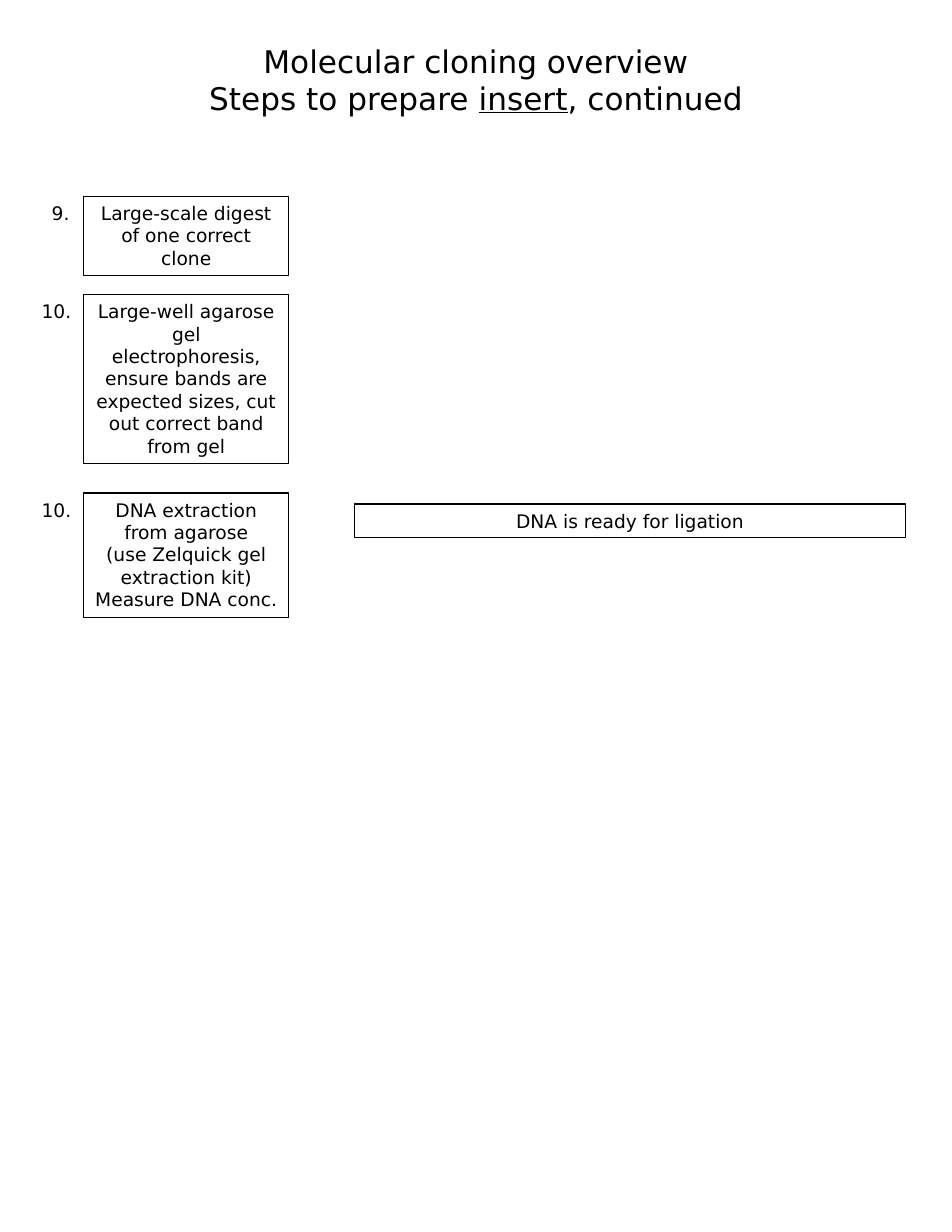
"""Build the molecular cloning overview slide on preparing the insert."""
from dataclasses import dataclass

from pptx import Presentation
from pptx.dml.color import RGBColor
from pptx.enum import shapes, text
from pptx.util import Cm, Pt

COLORS = {"ink": "000000", "paper": "FFFFFF"}
FONT = "DejaVu Sans"
LINE_HEIGHT = 0.76
STEP_LEFT, STEP_WIDTH = 1.9, 4.65


@dataclass(frozen=True)
class Step:
    number: str
    number_left: float
    number_width: float
    top: float
    height: float
    wording: str


STEPS = [
    Step("9.", 0.84, 1.07, 4.45, 1.8, "Large-scale digest of one correct clone"),
    Step("10.", 0.43, 1.7, 6.68, 3.84,
         "Large-well agarose gel electrophoresis, ensure bands are "
         "expected sizes, cut out correct band from gel"),
    Step("10.", 0.43, 1.7, 11.18, 2.82,
         "DNA extraction from agarose\n(use Zelquick gel extraction kit)\n"
         "Measure DNA conc."),
]


def format_text(text_frame, size: float) -> None:
    text_frame.word_wrap = True
    text_frame.vertical_anchor = text.MSO_ANCHOR.TOP
    for paragraph in text_frame.paragraphs:
        paragraph.alignment = text.PP_ALIGN.CENTER
        for run in paragraph.runs:
            run.font.name = FONT
            run.font.size = Pt(size)
            run.font.color.rgb = RGBColor.from_string(COLORS["ink"])


def add_title(slide) -> None:
    title = slide.shapes.add_textbox(Cm(0), Cm(0.84), Cm(21.59), Cm(1.96))
    title.text_frame.text = "Molecular cloning overview"
    subtitle = title.text_frame.add_paragraph()
    for wording in ("Steps to prepare ", "insert", ", continued"):
        run = subtitle.add_run()
        run.text = wording
        run.font.underline = wording == "insert"
    format_text(title.text_frame, 20)


def add_box(slide, wording: str, left: float, top: float, width: float,
            height: float, outline: str = "ink") -> None:
    shape = slide.shapes.add_shape(
        shapes.MSO_SHAPE.RECTANGLE, Cm(left), Cm(top), Cm(width), Cm(height))
    shape.shadow.inherit = False
    shape.fill.background()
    shape.line.color.rgb = RGBColor.from_string(COLORS[outline])
    shape.line.width = Pt(0.75)
    shape.text_frame.text = wording
    format_text(shape.text_frame, 12)


def add_step(slide, step: Step) -> None:
    add_box(slide, step.number, step.number_left, step.top,
            step.number_width, LINE_HEIGHT, "paper")
    add_box(slide, step.wording, STEP_LEFT, step.top, STEP_WIDTH, step.height)


def main() -> None:
    presentation = Presentation()
    presentation.slide_width, presentation.slide_height = Cm(21.59), Cm(27.94)
    slide = presentation.slides.add_slide(presentation.slide_layouts[6])
    add_title(slide)
    for step in STEPS:
        add_step(slide, step)
    add_box(slide, "DNA is ready for ligation", 8.04, 11.43, 12.5, LINE_HEIGHT)
    presentation.save("out.pptx")


if __name__ == "__main__":
    main()
